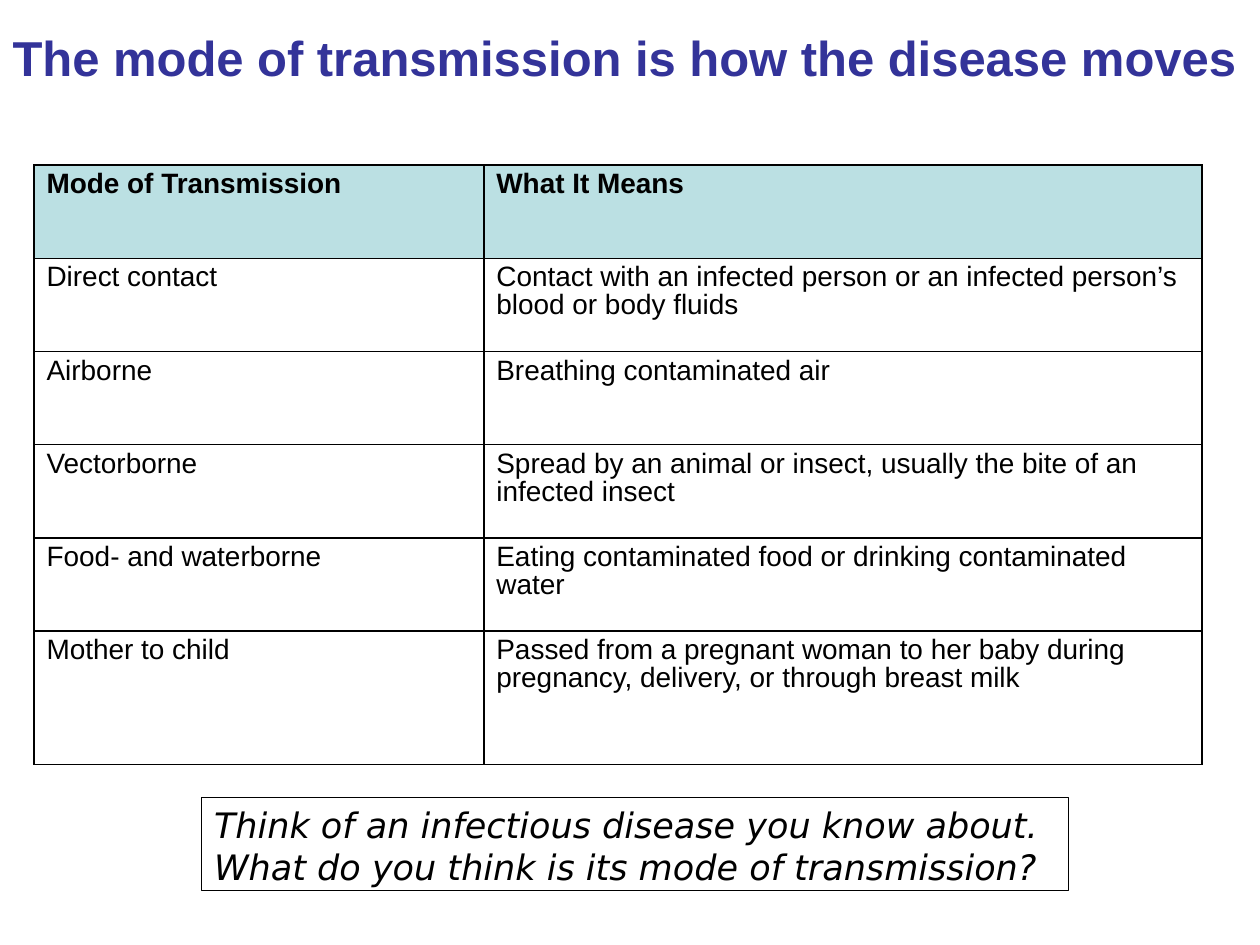
from lxml.etree import SubElement
from pptx import Presentation
from pptx.dml.color import RGBColor
from pptx.enum.text import MSO_ANCHOR, MSO_AUTO_SIZE, PP_ALIGN
from pptx.oxml.ns import qn
from pptx.util import Inches, Pt

TITLE = "The mode of transmission is how the disease moves"
MODES = [
    ("Mode of Transmission", "What It Means"),
    ("Direct contact", "Contact with an infected person or an infected person’s blood or body fluids"),
    ("Airborne", "Breathing contaminated air"),
    ("Vectorborne", "Spread by an animal or insect, usually the bite of an infected insect"),
    ("Food- and waterborne", "Eating contaminated food or drinking contaminated water"),
    ("Mother to child", "Passed from a pregnant woman to her baby during pregnancy, delivery, or through breast milk"),
]
PROMPT = "Think of an infectious disease you know about. What do you think is its mode of transmission?"
WIDTHS = [3.57, 5.7]
HEIGHTS = [0.74] * 5 + [1.06]

BLUE = RGBColor(0x33, 0x33, 0x99)
TEAL = RGBColor(0xBB, 0xE0, 0xE3)
BLACK = RGBColor(0, 0, 0)
WHITE = RGBColor(255, 255, 255)


def write(frame, text, size, color=BLACK, face="Arial", bold=False, italic=False):
    frame.word_wrap = True
    frame.vertical_anchor = MSO_ANCHOR.TOP
    para = frame.paragraphs[0]
    para.alignment = PP_ALIGN.LEFT
    run = para.add_run()
    run.text = text
    font = run.font
    font.size, font.name = Pt(size), face
    font.bold, font.italic = bold, italic
    font.color.rgb = color
    return para


def border(cell):
    props = cell._tc.get_or_add_tcPr()
    for side in ("lnL", "lnR", "lnT", "lnB"):
        line = SubElement(props, qn(f"a:{side}"), w=str(Pt(1)))
        fill = SubElement(line, qn("a:solidFill"))
        SubElement(fill, qn("a:srgbClr"), val=str(BLACK))


def main():
    deck = Presentation()
    deck.slide_width, deck.slide_height = Inches(10), Inches(7.5)
    slide = deck.slides.add_slide(deck.slide_layouts[5])

    title = slide.shapes.title
    title.left, title.top = Inches(0), Inches(0.17)
    title.width, title.height = Inches(10), Inches(0.86)
    title.text_frame.auto_size = MSO_AUTO_SIZE.NONE
    write(title.text_frame, TITLE, 28, BLUE, bold=True)

    table = slide.shapes.add_table(
        len(MODES), len(WIDTHS), Inches(0.27), Inches(1.31),
        Inches(sum(WIDTHS)), Inches(sum(HEIGHTS))).table
    for col, width in zip(table.columns, WIDTHS):
        col.width = Inches(width)
    for r, texts in enumerate(MODES):
        table.rows[r].height = Inches(HEIGHTS[r])
        for c, text in enumerate(texts):
            cell = table.cell(r, c)
            border(cell)
            cell.fill.solid()
            cell.fill.fore_color.rgb = WHITE if r else TEAL
            para = write(cell.text_frame, text, 16, bold=r == 0)
            para.line_spacing = 0.9

    prompt = slide.shapes.add_textbox(Inches(1.6), Inches(6.33), Inches(6.88), Inches(0.74))
    prompt.line.color.rgb = BLACK
    prompt.line.width = Pt(0.5)
    write(prompt.text_frame, PROMPT, 20, face="DejaVu Sans", italic=True)

    deck.save("out.pptx")


if __name__ == "__main__":
    main()
